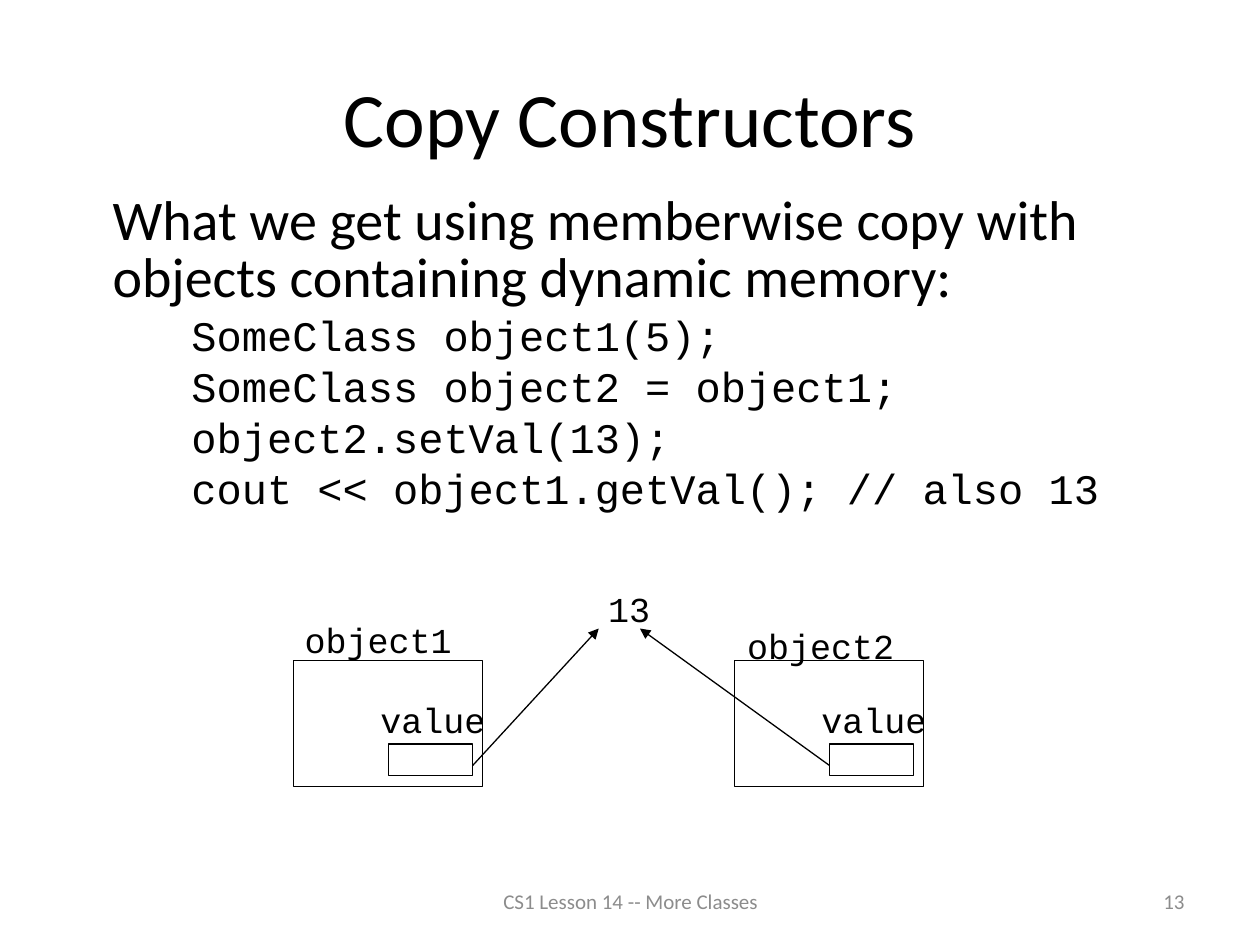
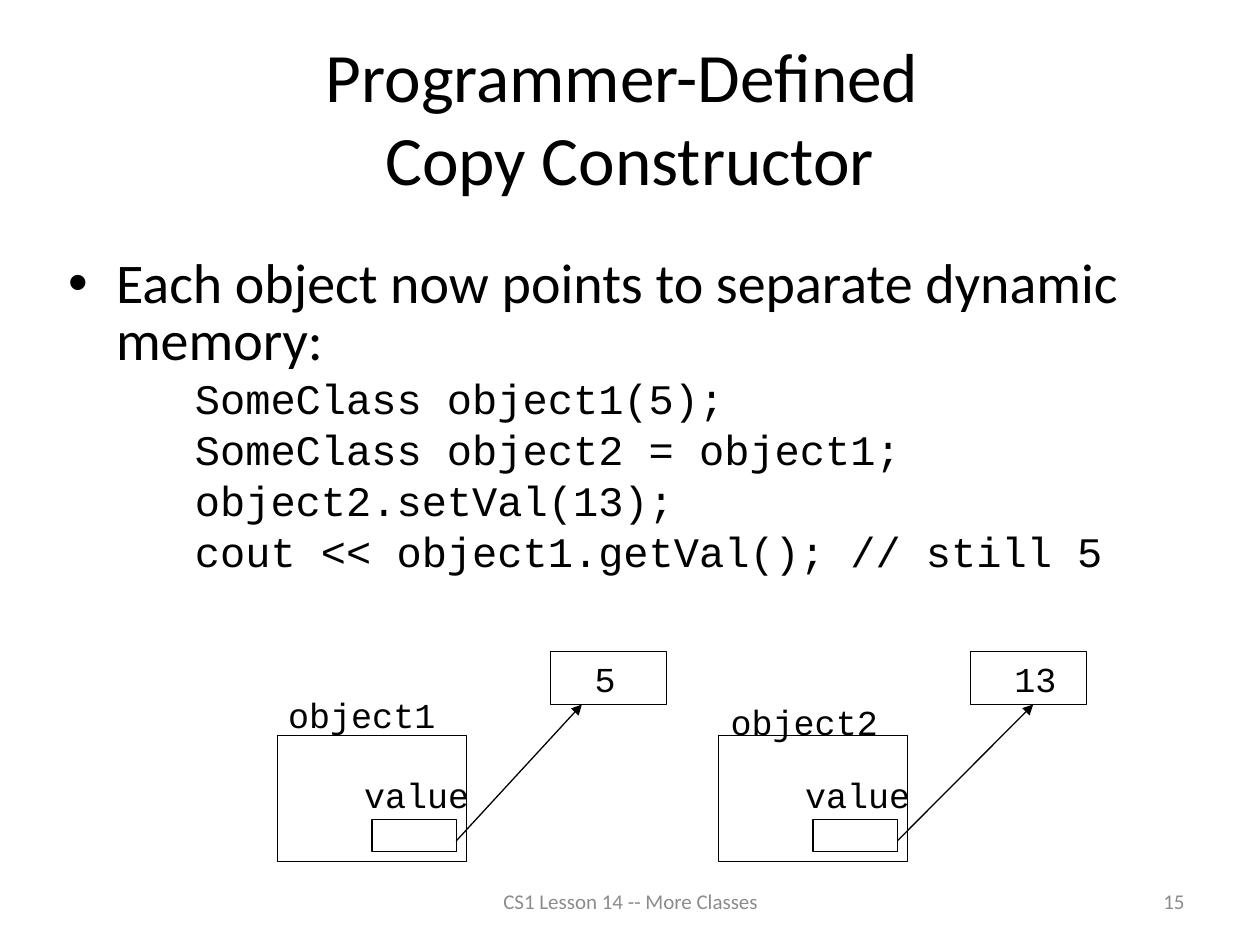
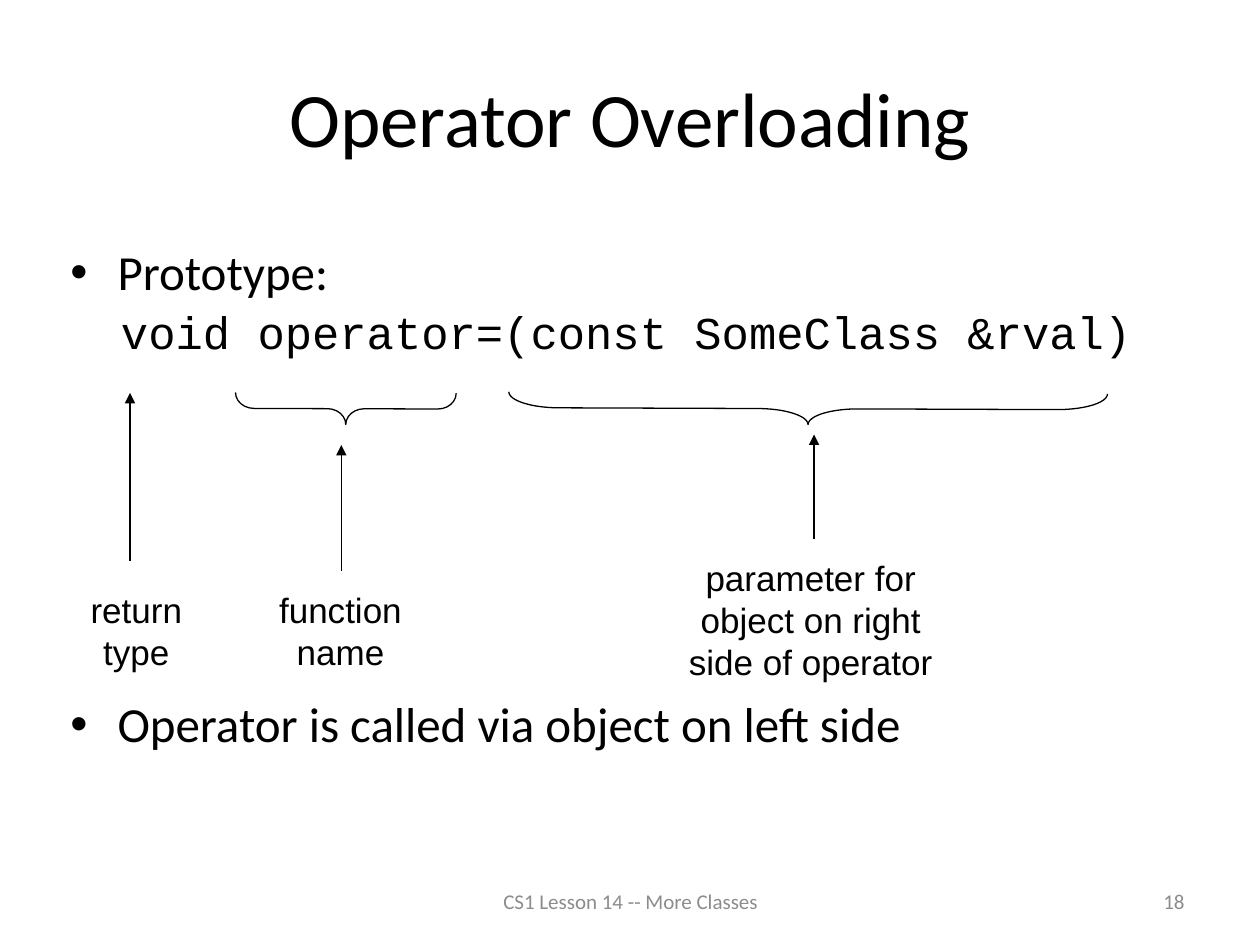
from dataclasses import dataclass

from lxml import etree
from pptx import Presentation
from pptx.dml.color import RGBColor
from pptx.enum.shapes import MSO_CONNECTOR, MSO_SHAPE
from pptx.enum.text import MSO_ANCHOR, MSO_AUTO_SIZE, PP_ALIGN
from pptx.oxml.ns import qn
from pptx.util import Cm, Pt

LEFT, CENTER, RIGHT = PP_ALIGN.LEFT, PP_ALIGN.CENTER, PP_ALIGN.RIGHT
TOP, MIDDLE = MSO_ANCHOR.TOP, MSO_ANCHOR.MIDDLE
RECTANGLE, BRACE = MSO_SHAPE.RECTANGLE, MSO_SHAPE.RIGHT_BRACE
STRAIGHT = MSO_CONNECTOR.STRAIGHT
NO_FIT = MSO_AUTO_SIZE.NONE


@dataclass(frozen=True)
class Theme:
    ink: RGBColor = RGBColor(0, 0, 0)
    muted: RGBColor = RGBColor(0x8C, 0x8C, 0x8C)
    sans: str = "Calibri"
    mono: str = "Courier New"
    callout: str = "Arial"
    title: float = 44
    long_title: float = 39.6
    lead: float = 32
    point: float = 28
    prototype: float = 26
    code: float = 24
    label: float = 20
    footer: float = 12
    line: float = 0.75


THEME = Theme()

FOOTER = "CS1 Lesson 14 -- More Classes"
TITLE_BOX = (1.27, 0.76, 22.86, 3.18)
FOOTER_BOX = (8.69, 17.65, 8.05, 1.02)
NUMBER_BOX = (18.21, 17.65, 5.92, 1.02)

LEAD = dict(size=THEME.lead, spacing=0.85, before=7.7, margin=0.95)
CODE = dict(size=THEME.code, font=THEME.mono, spacing=0.85, before=4.6, margin=2.54)
POINT = dict(size=THEME.point, spacing=0.9, before=6.7, margin=0.95, bullet=True)
PROTOTYPE = dict(size=THEME.prototype, font=THEME.mono, spacing=0.9, before=5, margin=1.02)

SETUP_CODE = ["SomeClass object1(5);", "SomeClass object2 = object1;", "object2.setVal(13);"]

COPY_SLIDES = [
    dict(
        title=["Copy Constructors"], title_size=THEME.title, number="13",
        body_box=(1.07, 3.81, 23.29, 12.9),
        lead="What we get using memberwise copy with objects containing dynamic memory:",
        bullet=False, result="cout << object1.getVal(); // also 13",
        objects_at=(5.92, 13.31),
        memory=[("13", 12.01, 11.71, False)],
        pointers=[("right", 12.07, 12.67), ("left", 12.9, 12.67)],
    ),
    dict(
        title=["Programmer-Defined ", "Copy Constructor"], title_size=THEME.long_title, number="15",
        body_box=(1.14, 5.08, 23.06, 10.39),
        lead="Each object now points to separate dynamic memory:",
        bullet=True, result="cout << object1.getVal(); // still 5",
        objects_at=(5.59, 14.83),
        memory=[("5", 11.1, 13.13, True), ("13", 19.56, 13.13, True)],
        pointers=[("right", 11.73, 14.2), ("right", 20.83, 14.2)],
    ),
]

OBJECT_LABELS = [("object1", -0.03, -0.97), ("object2", 0, -0.84)]
OBJECT_PITCH = 8.89
OBJECT_SIZE = (3.81, 2.54)
SLOT_OFFSET = (1.91, 1.69)
SLOT_SIZE = (1.7, 0.64)
POINTER_DROP = 0.43
VALUE_OFFSET = (1.5, 0.64)
MEMORY_SIZE = (2.34, 1.07)
MEMORY_INDENT = 0.64
LETTER_WIDTH, LABEL_PADDING, LABEL_HEIGHT = 0.43, 0.7, 1.09

OPERATOR_BODY_BOX = (1.17, 4.88, 23.06, 10.39)
OPERATOR_BODY = [
    ("Prototype:", POINT),
    ("void operator=(const SomeClass &rval)", PROTOTYPE),
    ("Operator is called via object on left side", dict(POINT, before=195)),
]
CALLOUTS = [
    (["return", "type"], (1.42, 11.73, 2.66, 1.96), (2.62, 11.3, 7.92)),
    (["function", "name"], (5.23, 11.73, 3.27, 1.96), (6.88, 11.51, 8.97)),
    (["parameter for", "object on right", "side of operator"],
     (13.49, 11.1, 5.71, 2.79), (16.41, 10.87, 8.76)),
]
BRACES = [(6.97, 4.45, 0.58), (16.29, 12.07, 1.59)]
BRACE_MIDDLE, BRACE_DEPTH = 8.24, 0.64


def lengths(values):
    return [Cm(value) for value in values]


def write(paragraph, text, *, size, font=THEME.sans, color=THEME.ink, align=LEFT,
          spacing=None, before=None, margin=None, bullet=False):
    paragraph.alignment = align
    if spacing:
        paragraph.line_spacing = spacing
    if before:
        paragraph.space_before = Pt(before)
    if margin:
        properties = paragraph._p.get_or_add_pPr()
        properties.set("marL", str(Cm(margin)))
        properties.set("indent", str(-Cm(margin) if bullet else 0))
        if bullet:
            etree.SubElement(properties, qn("a:buFont"), typeface="Arial")
            etree.SubElement(properties, qn("a:buChar"), char="•")
    run = paragraph.add_run()
    run.text = text
    run.font.size = Pt(size)
    run.font.name = font
    run.font.color.rgb = color


def add_text(slide, box, paragraphs, wrap=True, anchor=TOP):
    frame = slide.shapes.add_textbox(*lengths(box)).text_frame
    frame.word_wrap = wrap
    frame.auto_size = NO_FIT
    frame.vertical_anchor = anchor
    for index, (text, style) in enumerate(paragraphs):
        paragraph = frame.add_paragraph() if index else frame.paragraphs[0]
        write(paragraph, text, **style)


def add_label(slide, text, left, top):
    box = (left, top, LABEL_PADDING + LETTER_WIDTH * len(text), LABEL_HEIGHT)
    add_text(slide, box, [(text, dict(size=THEME.label, font=THEME.mono))])


def add_outline(slide, kind, box):
    outline = slide.shapes.add_shape(kind, *lengths(box))
    outline.shadow.inherit = False
    outline.fill.background()
    outline.line.color.rgb = THEME.ink
    outline.line.width = Pt(THEME.line)
    return outline


def add_arrow(slide, start, end):
    arrow = slide.shapes.add_connector(STRAIGHT, *lengths(start + end))
    arrow.line.color.rgb = THEME.ink
    arrow.line.width = Pt(THEME.line)
    etree.SubElement(arrow.line._get_or_add_ln(), qn("a:tailEnd"), type="triangle")
    etree.SubElement(arrow._element.spPr, qn("a:effectLst"))


def add_slide(deck, title_lines, title_size, number):
    slide = deck.slides.add_slide(deck.slide_layouts[5])
    title = slide.shapes.title
    title.left, title.top, title.width, title.height = lengths(TITLE_BOX)
    frame = title.text_frame
    frame.auto_size = NO_FIT
    frame.vertical_anchor = MIDDLE
    heading = frame.paragraphs[0]
    for index, text in enumerate(title_lines):
        if index:
            heading.add_line_break()
        write(heading, text, size=title_size, align=CENTER)
    for text, box, align in [(FOOTER, FOOTER_BOX, CENTER), (number, NUMBER_BOX, RIGHT)]:
        style = dict(size=THEME.footer, color=THEME.muted, align=align)
        add_text(slide, box, [(text, style)], anchor=MIDDLE)
    return slide


def add_copy_slide(deck, content):
    slide = add_slide(deck, content["title"], content["title_size"], content["number"])
    lead = (content["lead"], dict(LEAD, bullet=content["bullet"]))
    code = [(text, CODE) for text in SETUP_CODE + [content["result"]]]
    add_text(slide, content["body_box"], [lead] + code)

    first_left, top = content["objects_at"]
    slots = []
    for index, (name, shift, rise) in enumerate(OBJECT_LABELS):
        left = first_left + index * OBJECT_PITCH
        slot = (left + SLOT_OFFSET[0], top + SLOT_OFFSET[1])
        slots.append(slot)
        add_outline(slide, RECTANGLE, (left, top) + OBJECT_SIZE)
        add_outline(slide, RECTANGLE, slot + SLOT_SIZE)
        add_label(slide, name, left + shift, top + rise)
        add_label(slide, "value", left + VALUE_OFFSET[0], top + VALUE_OFFSET[1])

    for value, left, memory_top, boxed in content["memory"]:
        if boxed:
            add_outline(slide, RECTANGLE, (left, memory_top) + MEMORY_SIZE)
        add_label(slide, value, left + MEMORY_INDENT * boxed, memory_top)

    for (left, slot_top), (side, *target) in zip(slots, content["pointers"]):
        edge = left + SLOT_SIZE[0] * (side == "right")
        add_arrow(slide, (edge, slot_top + POINTER_DROP), tuple(target))


def add_operator_slide(deck):
    slide = add_slide(deck, ["Operator Overloading"], THEME.title, "18")
    add_text(slide, OPERATOR_BODY_BOX, OPERATOR_BODY)
    style = dict(size=THEME.label, font=THEME.callout, align=CENTER)
    for words, box, (x, bottom, top) in CALLOUTS:
        add_text(slide, box, [(text, style) for text in words])
        add_arrow(slide, (x, bottom), (x, top))
    for middle, span, curl in BRACES:
        box = (middle - BRACE_DEPTH / 2, BRACE_MIDDLE - span / 2, BRACE_DEPTH, span)
        brace = add_outline(slide, BRACE, box)
        brace.rotation = 90.2
        brace.adjustments[0] = curl


def main():
    deck = Presentation()
    deck.slide_width, deck.slide_height = Cm(25.4), Cm(19.05)
    for content in COPY_SLIDES:
        add_copy_slide(deck, content)
    add_operator_slide(deck)
    deck.save("out.pptx")


if __name__ == "__main__":
    main()
